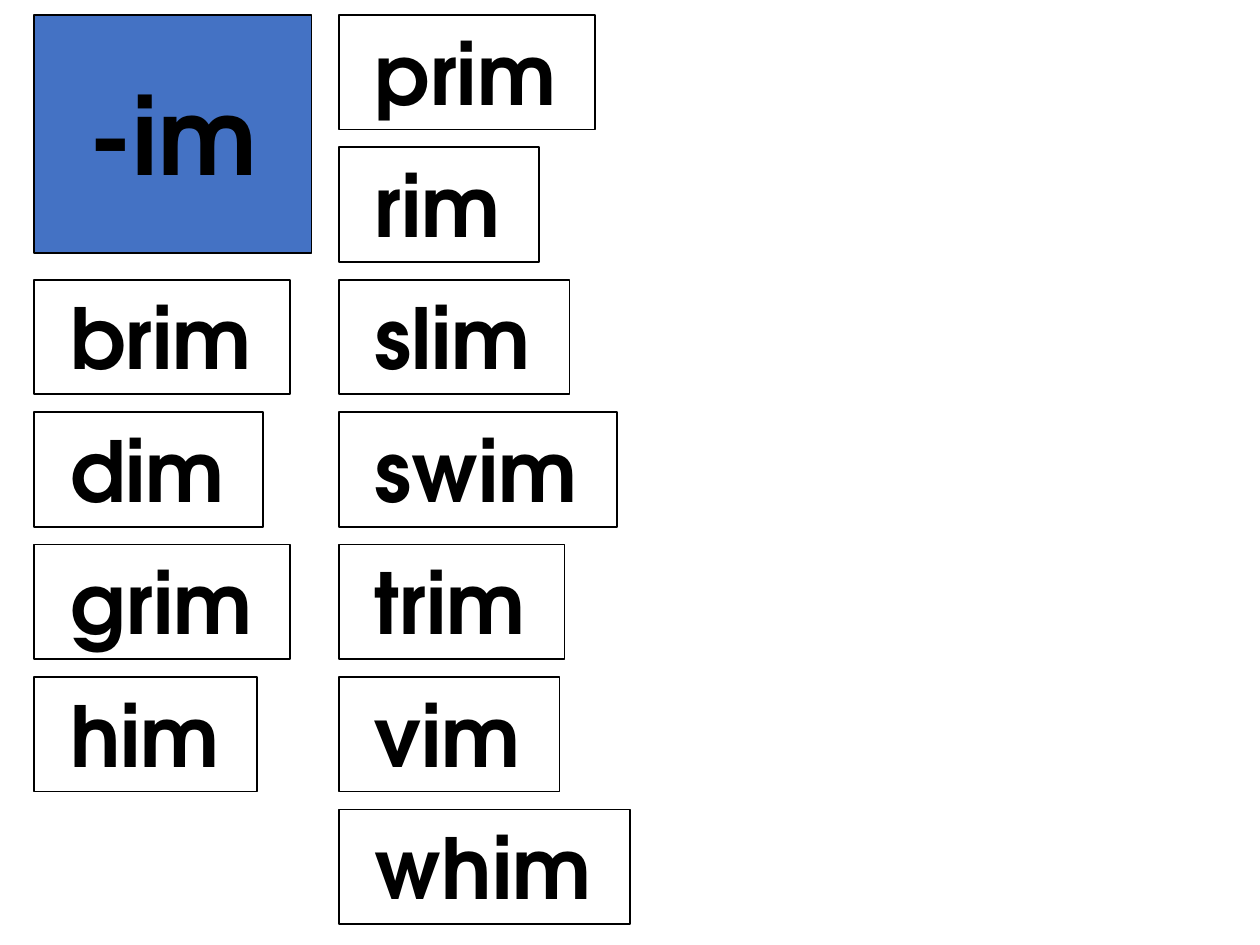
import pptx
import pptx.util
import pptx.dml.color
import pptx.enum.text

Cm, Pt = pptx.util.Cm, pptx.util.Pt
text = pptx.enum.text

HEAD = "-im"
LISTS = [
    (0.69, 2, [("brim", 5.16), ("dim", 4.62), ("grim", 5.16), ("him", 4.5)]),
    (6.83, 0, [("prim", 5.16), ("rim", 4.04), ("slim", 4.65), ("swim", 5.61),
               ("trim", 4.55), ("vim", 4.45), ("whim", 5.87)]),
]
TOP, STEP, HIGH = 0.3, 2.67, 2.31
FONT = {"name": "TeX Gyre Adventor", "bold": True}
CARD = {"word_wrap": False, "auto_size": text.MSO_AUTO_SIZE.SHAPE_TO_FIT_TEXT,
        "vertical_anchor": text.MSO_ANCHOR.TOP}
MAIN = {"word_wrap": True, "auto_size": text.MSO_AUTO_SIZE.NONE,
        "vertical_anchor": text.MSO_ANCHOR.MIDDLE}


def put(item, values):
    for key, value in values.items():
        setattr(item, key, value)


def tint(color, code):
    color.rgb = pptx.dml.color.RGBColor.from_string(code)


def style(box, words, size, fill, frame, align):
    box.fill.solid()
    tint(box.fill.fore_color, fill)
    tint(box.line.color, "000000")
    box.line.width = Pt(1)
    put(box.text_frame, frame)
    line = box.text_frame.paragraphs[0]
    line.alignment = align
    run = line.add_run()
    run.text = words
    put(run.font, {**FONT, "size": Pt(size)})
    tint(run.font.color, "000000")


deck = pptx.Presentation()
put(deck, {"slide_width": Cm(25.4), "slide_height": Cm(19.05)})
slide = deck.slides.add_slide(deck.slide_layouts[5])

for left, start, words in LISTS:
    for row, (word, wide) in enumerate(words, start):
        box = slide.shapes.add_textbox(
            Cm(left), Cm(TOP + row * STEP), Cm(wide), Cm(HIGH))
        style(box, f" {word}", 48, "FFFFFF", CARD, text.PP_ALIGN.LEFT)

head = slide.shapes.title
put(head, {"left": Cm(0.69), "top": Cm(TOP),
           "width": Cm(5.59), "height": Cm(4.8)})
style(head, HEAD, 60, "4472C4", MAIN, text.PP_ALIGN.CENTER)

deck.save("out.pptx")
